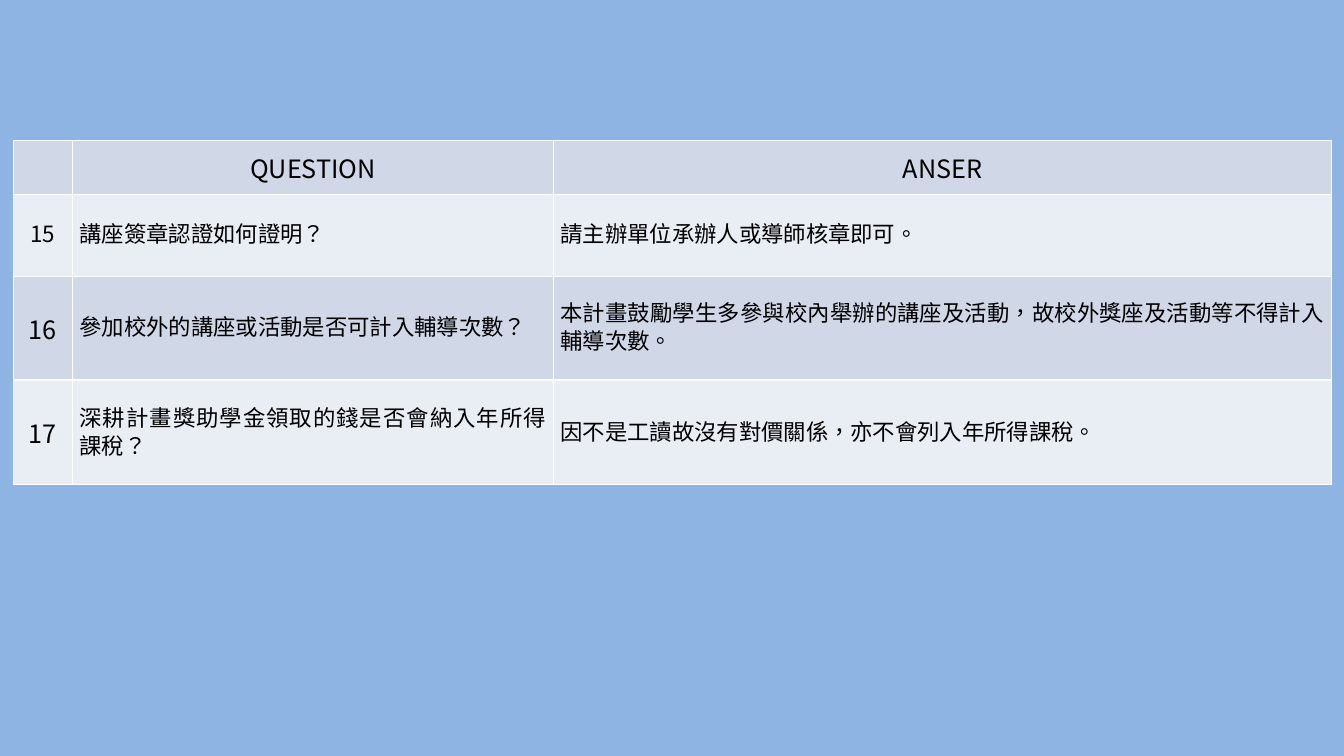
"""Build a slide with a question and answer table on a blue background."""
from lxml import etree
from pptx import Presentation
from pptx.dml.color import RGBColor
from pptx.enum.text import MSO_ANCHOR, PP_ALIGN
from pptx.oxml.ns import qn
from pptx.util import Inches, Pt

CENTER = PP_ALIGN.CENTER
JUSTIFY = PP_ALIGN.JUSTIFY
MIDDLE = MSO_ANCHOR.MIDDLE
CJK_FONT = "Noto Sans CJK SC"
LATIN_FONT = "Calibri"
BAND_FILLS = ["D0D8E8", "E9EDF4"]
COLUMN_WIDTHS = [0.59, 4.77, 7.72]
ROW_HEIGHTS = [0.54, 0.81, 1.03, 1.04]
NUMBER_SIZES = [18, 16, 18, 18]
ROWS = [
    ["", "QUESTION", "ANSER"],
    ["15", "講座簽章認證如何證明？", "請主辦單位承辦人或導師核章即可。"],
    ["16", "參加校外的講座或活動是否可計入輔導次數？",
     "本計畫鼓勵學生多參與校內舉辦的講座及活動，故校外獎座及活動等不得計入輔導次數。"],
    ["17", "深耕計畫獎助學金領取的錢是否會納入年所得課稅？",
     "因不是工讀故沒有對價關係，亦不會列入年所得課稅。"],
]


def color(value):
    return RGBColor.from_string(value)


def add_borders(cell, value, width):
    properties = cell._tc.get_or_add_tcPr()
    for position, side in enumerate(["a:lnL", "a:lnR", "a:lnT", "a:lnB"]):
        line = etree.Element(qn(side), w=str(Pt(width)))
        fill = etree.SubElement(line, qn("a:solidFill"))
        etree.SubElement(fill, qn("a:srgbClr"), val=value)
        properties.insert(position, line)


presentation = Presentation()
presentation.slide_width = Inches(13.33)
presentation.slide_height = Inches(7.5)
slide = presentation.slides.add_slide(presentation.slide_layouts[6])
slide.background.fill.solid()
slide.background.fill.fore_color.rgb = color("8EB4E3")

table = slide.shapes.add_table(
    len(ROWS), len(COLUMN_WIDTHS), Inches(0.13), Inches(1.39),
    Inches(sum(COLUMN_WIDTHS)), Inches(sum(ROW_HEIGHTS))).table
for column, width in zip(table.columns, COLUMN_WIDTHS):
    column.width = Inches(width)
for row, height in zip(table.rows, ROW_HEIGHTS):
    row.height = Inches(height)
table.first_row = False
table.horz_banding = False

for row_index, texts in enumerate(ROWS):
    for column_index, text in enumerate(texts):
        cell = table.cell(row_index, column_index)
        cell.fill.solid()
        cell.fill.fore_color.rgb = color(BAND_FILLS[row_index % 2])
        add_borders(cell, "FFFFFF", 1)
        cell.vertical_anchor = MIDDLE
        cell.margin_left = cell.margin_right = Inches(0.07)
        cell.margin_top = cell.margin_bottom = 0
        if not text:
            continue
        is_body = row_index > 0 and column_index > 0
        size = 16 if is_body else NUMBER_SIZES[row_index]
        paragraph = cell.text_frame.paragraphs[0]
        paragraph.alignment = JUSTIFY if is_body else CENTER
        if size == 16:
            paragraph.line_spacing = Pt(20)
        run = paragraph.add_run()
        run.text = text
        run.font.size = Pt(size)
        run.font.bold = False
        run.font.color.rgb = color("000000")
        run.font.name = LATIN_FONT if is_body else CJK_FONT
        run_properties = run._r.get_or_add_rPr()
        run_properties.set("lang", "zh-TW")
        etree.SubElement(run_properties, qn("a:ea"), typeface=CJK_FONT)

presentation.save("out.pptx")
